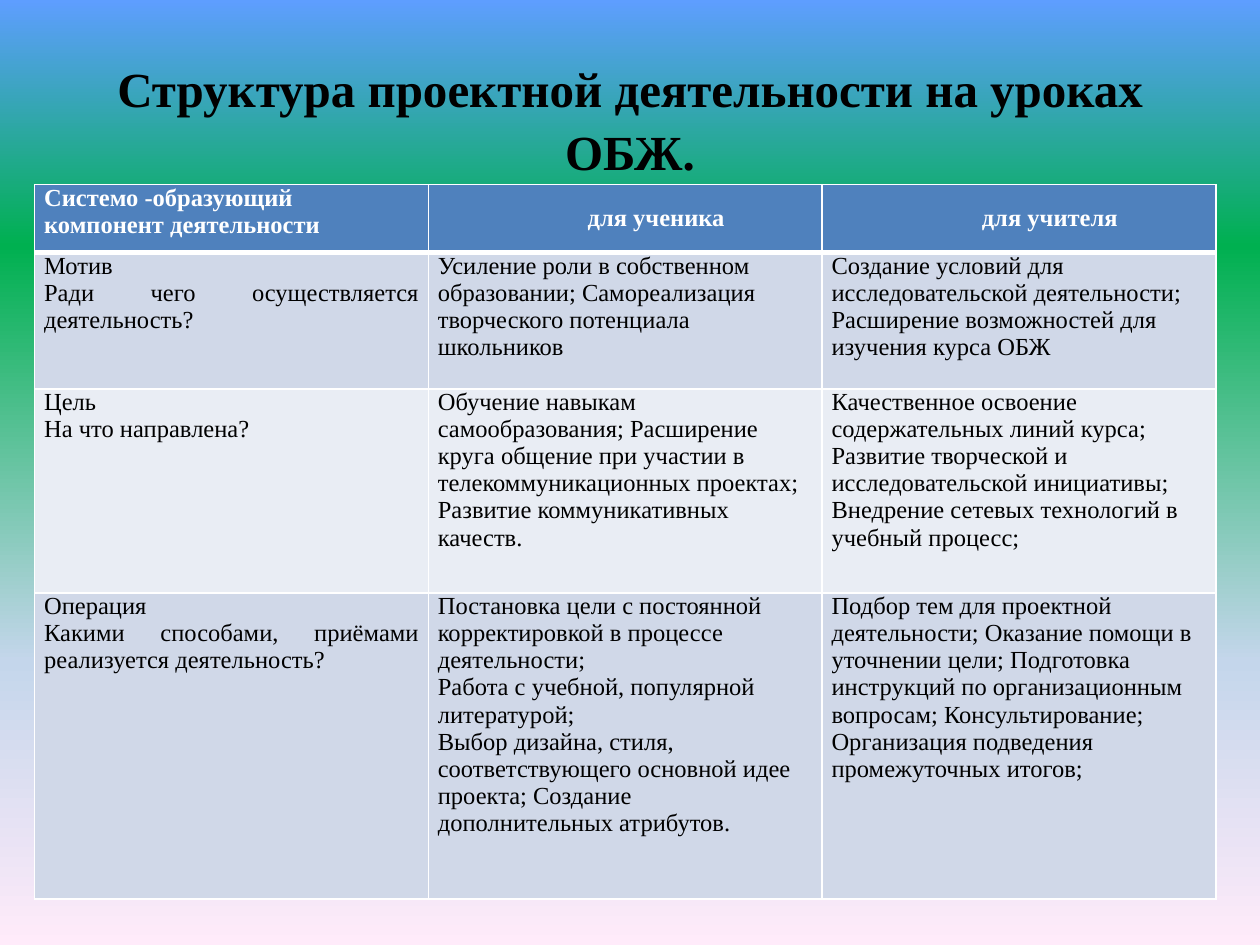
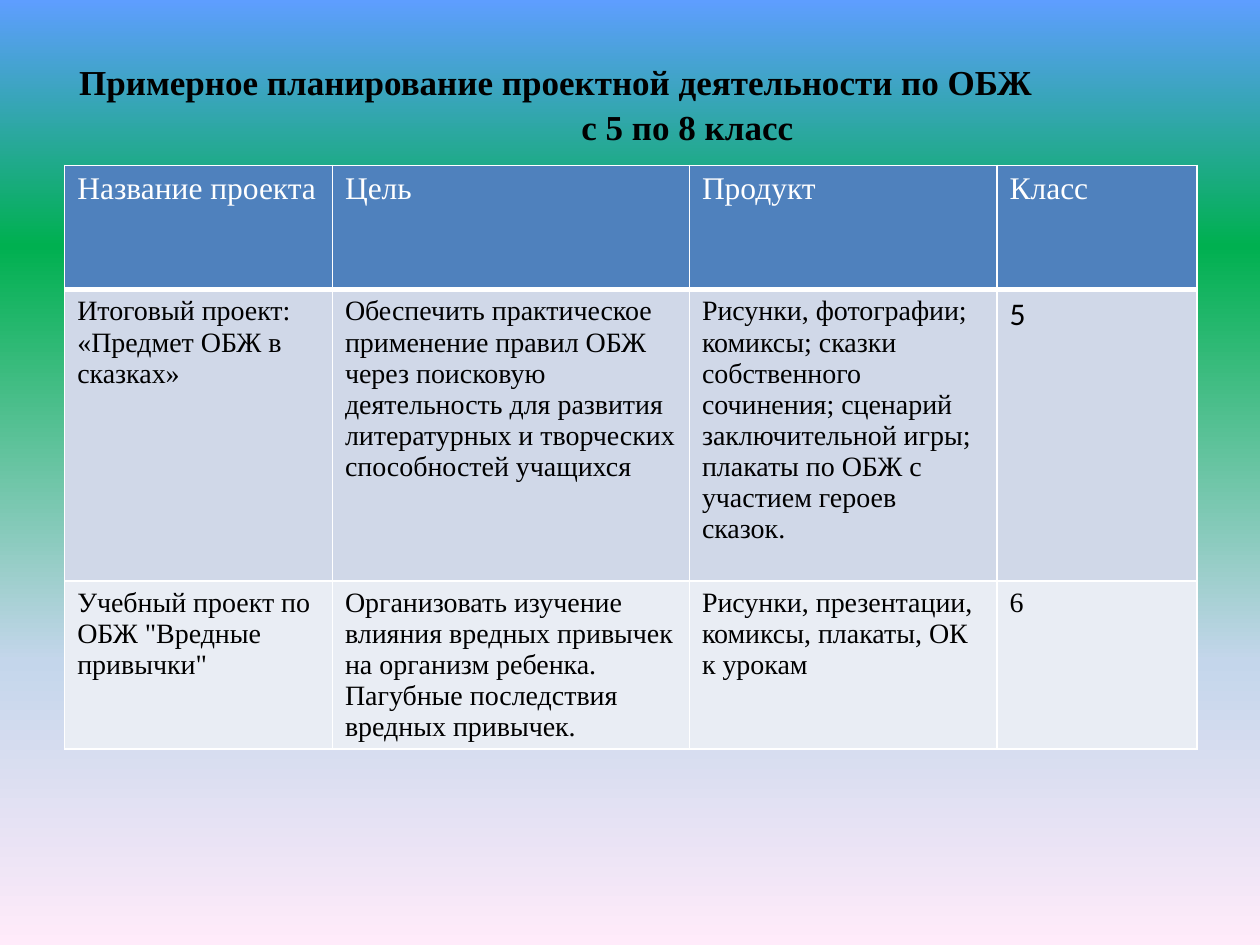
from lxml import etree
from pptx import Presentation
from pptx.dml.color import RGBColor
from pptx.enum.text import MSO_ANCHOR, MSO_AUTO_SIZE, PP_ALIGN
from pptx.oxml.ns import qn
from pptx.util import Pt

FONT = "Times New Roman"
BLACK, WHITE = "000000", "FFFFFF"
HEADER, BANDS = "4F81BD", ("D0D8E8", "E9EDF4")
GRADIENT = [(0, "5E9EFF"), (26, "00B050"), (70, "C4D6EB"), (100, "FFEBFA")]

STRUCTURE_TITLE = "Структура проектной деятельности на уроках ОБЖ."
STRUCTURE = [
    ["Системо -образующий компонент деятельности", "для ученика", "для учителя"],
    ["Мотив\nРади чего осуществляется деятельность?",
     "Усиление роли в собственном образовании; Самореализация творческого "
     "потенциала школьников",
     "Создание условий для исследовательской деятельности; Расширение "
     "возможностей для изучения курса ОБЖ"],
    ["Цель\nНа что направлена?",
     "Обучение навыкам самообразования; Расширение круга общение при участии в "
     "телекоммуникационных проектах; Развитие коммуникативных качеств.",
     "Качественное освоение содержательных линий курса; Развитие творческой и "
     "исследовательской инициативы;\n"
     "Внедрение сетевых технологий в учебный процесс;"],
    ["Операция\nКакими способами, приёмами реализуется деятельность?",
     "Постановка цели с постоянной корректировкой в процессе деятельности;\n"
     "Работа с учебной, популярной литературой;\n"
     "Выбор дизайна, стиля, соответствующего основной идее проекта; Создание "
     "дополнительных атрибутов.",
     "Подбор тем для проектной деятельности; Оказание помощи в уточнении цели; "
     "Подготовка инструкций по организационным вопросам; Консультирование; "
     "Организация подведения промежуточных итогов;"],
]

PLAN_TITLE = "Примерное планирование проектной деятельности по ОБЖ\nс 5 по 8 класс"
PLAN = [
    ["Название проекта", "Цель", "Продукт", "Класс"],
    ["Итоговый проект: «Предмет ОБЖ в сказках»",
     "Обеспечить практическое применение правил ОБЖ через поисковую деятельность "
     "для развития литературных и творческих способностей учащихся",
     "Рисунки, фотографии; комиксы; сказки собственного сочинения; сценарий "
     "заключительной игры; плакаты по ОБЖ с участием героев сказок.",
     "5"],
    ["Учебный проект по ОБЖ \"Вредные привычки\"",
     "Организовать изучение влияния вредных привычек на организм ребенка. "
     "Пагубные последствия вредных привычек.",
     "Рисунки, презентации, комиксы, плакаты, ОК к урокам",
     "6"],
]


def rgb(color):
    return RGBColor.from_string(color)


def write(tf, text, size, color=BLACK, bold=False, font=FONT,
          align=PP_ALIGN.LEFT, indents=(0,), spacing=None):
    for i, line in enumerate(text.split("\n")):
        p = tf.paragraphs[0] if i == 0 else tf.add_paragraph()
        p.alignment = align
        p.line_spacing = spacing
        indent = indents[min(i, len(indents) - 1)]
        if indent:
            pPr = p._p.get_or_add_pPr()
            pPr.set("marL", "0")
            pPr.set("indent", str(Pt(indent)))
        r = p.add_run()
        r.text = line
        r.font.name, r.font.size, r.font.bold = font, Pt(size), bold
        r.font.color.rgb = rgb(color)


def set_background(master):
    fill = master.background.fill
    fill.gradient()
    fill.gradient_angle = 270
    stops = master.element.find(".//" + qn("a:gsLst"))
    for stop in list(stops):
        stops.remove(stop)
    for position, color in GRADIENT:
        stop = etree.SubElement(stops, qn("a:gs"), pos=str(position * 1000))
        etree.SubElement(stop, qn("a:srgbClr"), val=color)


def add_titled_slide(prs, title, box, **style):
    s = prs.slides.add_slide(prs.slide_layouts[5])
    sp = s.shapes.title
    sp.left, sp.top, sp.width, sp.height = map(Pt, box)
    tf = sp.text_frame
    tf.auto_size = MSO_AUTO_SIZE.NONE
    tf.vertical_anchor = MSO_ANCHOR.MIDDLE
    write(tf, title, bold=True, spacing=1.07, **style)
    return s


def set_borders(cell, widths):
    tcPr = cell._tc.get_or_add_tcPr()
    for i, (side, width) in enumerate(zip("LRTB", widths)):
        ln = etree.Element(qn(f"a:ln{side}"), w=str(Pt(width)))
        fill = etree.SubElement(ln, qn("a:solidFill"))
        etree.SubElement(fill, qn("a:srgbClr"), val=WHITE)
        tcPr.insert(i, ln)


def add_grid(s, rows, left, top, widths, heights, margins, style_of):
    table = s.shapes.add_table(len(rows), len(widths), Pt(left), Pt(top),
                               Pt(sum(widths)), Pt(sum(heights))).table
    table.horz_banding = False
    for column, width in zip(table.columns, widths):
        column.width = Pt(width)
    for i, (row, height) in enumerate(zip(rows, heights)):
        table.rows[i].height = Pt(height)
        for j, value in enumerate(row):
            cell = table.cell(i, j)
            cell.margin_left = cell.margin_right = Pt(margins[0])
            cell.margin_top = cell.margin_bottom = Pt(margins[1])
            cell.fill.solid()
            cell.fill.fore_color.rgb = rgb(BANDS[(i - 1) % 2] if i else HEADER)
            set_borders(cell, (1, 1, 1 if i != 1 else 3, 1 if i else 3))
            style = style_of(i, j)
            if style.get("align") == PP_ALIGN.CENTER:
                cell.vertical_anchor = MSO_ANCHOR.MIDDLE
            write(cell.text_frame, value, color=BLACK if i else WHITE, **style)


def structure_style(i, j):
    if i == 0 and j:
        return dict(size=14, bold=True, align=PP_ALIGN.CENTER, indents=(35.3,))
    if i and j == 0:
        return dict(size=14, align=PP_ALIGN.JUSTIFY)
    return dict(size=14, bold=i == 0)


def plan_style(i, j):
    if (i, j) == (1, 3):
        return dict(size=18, font="Calibri")
    return dict(size=16 if i else 18)


def main():
    prs = Presentation()
    prs.slide_width, prs.slide_height = Pt(720), Pt(540)
    set_background(prs.slide_master)

    s = add_titled_slide(prs, STRUCTURE_TITLE, (36, 22, 648, 90),
                         size=28, align=PP_ALIGN.CENTER)
    add_grid(s, STRUCTURE, 19.8, 105.5, [225] * 3, [38.9, 77.8, 116.6, 175],
             (5.4, 0), structure_style)

    s = add_titled_slide(prs, PLAN_TITLE, (38, 22, 646, 73),
                         size=20, indents=(0, 287))
    add_grid(s, PLAN, 37, 94.5, [153, 204, 175.8, 114.2], [71, 166.5, 96],
             (7.2, 3.6), plan_style)

    prs.save("out.pptx")


if __name__ == "__main__":
    main()
